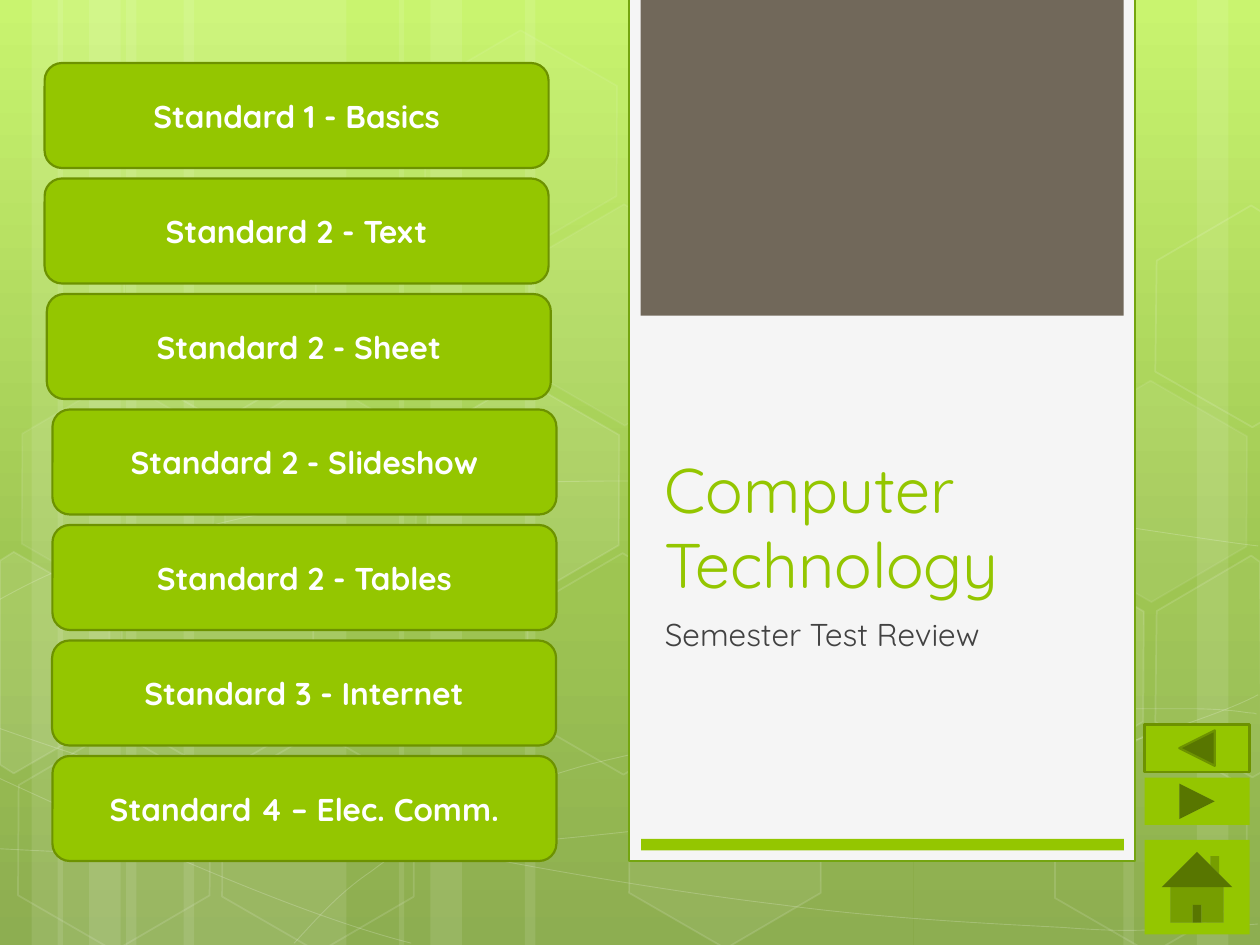
from copy import deepcopy

from lxml import etree
from pptx import Presentation
from pptx.dml.color import RGBColor
from pptx.enum.shapes import MSO_SHAPE
from pptx.enum.text import MSO_ANCHOR, MSO_AUTO_SIZE, PP_ALIGN
from pptx.oxml.ns import qn
from pptx.util import Pt

RECTANGLE = MSO_SHAPE.RECTANGLE
ROUNDED = MSO_SHAPE.ROUNDED_RECTANGLE
HEXAGON = MSO_SHAPE.HEXAGON
HOME = MSO_SHAPE.ACTION_BUTTON_HOME
NEXT = MSO_SHAPE.ACTION_BUTTON_FORWARD_OR_NEXT
BACK = MSO_SHAPE.ACTION_BUTTON_BACK_OR_PREVIOUS
TOP, MIDDLE, BOTTOM = MSO_ANCHOR.TOP, MSO_ANCHOR.MIDDLE, MSO_ANCHOR.BOTTOM
LEFT, CENTER = PP_ALIGN.LEFT, PP_ALIGN.CENTER
NO_FIT = MSO_AUTO_SIZE.NONE

FONT = "Quicksand"
GREEN, DARK_GREEN, WHITE = "94C600", "6D9200", "FFFFFF"
PAGE_WIDTH, PAGE_HEIGHT = 720, 540

BACKGROUND_STOPS = [(0, "C3F35F"), (0.62, "93BF3F"), (1, "81A53E")]

# Left and width of the pale vertical bands
BANDS = [(72, 126), (0, 36), (18, 60), (105, 126), (33, 36), (51, 60),
         (522, 126), (684, 36), (642, 60), (300, 222), (228, 36), (246, 60)]

# Bezier chains: a start point, then two handles and an end point per segment
WAVES = [
    [(-1, 485), (38, 487), (77, 489), (131, 488), (185, 487), (251, 486), (323, 479),
     (396, 472), (498, 458), (564, 444), (630, 431), (697, 409), (719, 397)],
    [(-1, 343), (19, 332), (40, 321), (81, 310), (122, 300), (180, 284), (244, 279),
     (308, 274), (385, 273), (464, 279), (544, 284), (676, 307), (719, 312)],
    [(-2, 444), (85, 484), (172, 523), (235, 539)],
    [(-1, 416), (22, 424), (44, 432), (86, 444), (128, 454), (191, 472), (251, 485),
     (310, 497), (387, 510), (446, 517), (505, 525), (570, 528), (608, 530),
     (646, 533), (656, 531), (674, 531), (693, 531), (706, 529), (719, 528)],
    [(168, 539), (181, 525), (194, 510), (212, 498), (229, 485), (253, 470), (273, 460),
     (293, 450), (305, 446), (332, 438), (359, 431), (407, 421), (432, 416),
     (457, 411), (461, 411), (483, 410), (505, 408), (541, 405), (566, 405),
     (590, 404), (632, 405), (632, 405), (648, 405), (664, 405), (680, 405),
     (693, 405), (705, 406), (711, 407), (718, 408), (716, 407), (718, 408)],
]

# Left, top, fill opacity and line opacity, in percent
HEXAGONS = [
    (236, 225.4, 10, 12), (293, 324.7, 0, 12), (293.8, 125.3, 7, 8),
    (234.7, 25.9, 4, 8), (351.4, 424.1, 6, 12), (2.2, 425.5, 0, 12),
    (4.3, 224.6, 7, 8), (61.2, 324.7, 0, 12), (118.8, 426.2, 0, 12),
    (120.2, 225.4, 7, 8), (62.6, 123.1, 0, 12), (535.7, 326.2, 10, 12),
    (594.7, 427, 0, 12), (594.7, 226.1, 7, 8),
]

# Hexagons cut by the page edge: corners and fill opacity
CUT_HEXAGONS = [
    ([(0, 320.4), (7.9, 315.4), (62.6, 347), (62.6, 410.4), (7.9, 442), (0, 437)], 10),
    ([(661, 349.2), (715, 317.5), (720, 321.1), (720.7, 441.4), (715.7, 444.2),
      (660.2, 412.6)], 4),
    ([(661, 149), (715, 117.4), (720.7, 121), (720.7, 241.2), (715.7, 244.1),
      (660.2, 212.4)], 0),
]

TOPICS = [
    (25.5, "Standard 1 - Basics"), (25.5, "Standard 2 - Text"),
    (26.8, "Standard 2 - Sheet"), (30, "Standard 2 - Slideshow"),
    (30, "Standard 2 - Tables"), (29.8, "Standard 3 - Internet"),
    (30, "Standard 4 – Elec. Comm."),
]


def rgb(value):
    return RGBColor.from_string(value)


def set_all(target, values):
    for name, value in values.items():
        setattr(target, name, value)


def paint(fill, color, opacity=100):
    if not color or not opacity:
        fill.background()
        return
    fill.solid()
    fill.fore_color.rgb = rgb(color)


def add_opacity(element, opacity):
    alpha = etree.SubElement(element.find(".//" + qn("a:srgbClr")), qn("a:alpha"))
    alpha.set("val", str(opacity * 1000))


def style(shape, fill=None, line=None, width=1.25, fill_opacity=100, line_opacity=100):
    shape.shadow.inherit = False
    paint(shape.fill, fill, fill_opacity)
    paint(shape.line.fill, line)
    if line:
        shape.line.width = Pt(width)
    properties = shape.element.spPr
    if fill and 0 < fill_opacity < 100:
        add_opacity(properties.find(qn("a:solidFill")), fill_opacity)
    if line and line_opacity < 100:
        add_opacity(properties.find(qn("a:ln")), line_opacity)


def add_box(shapes, kind, place, **look):
    box = shapes.add_shape(kind, *map(Pt, place))
    style(box, **look)
    return box


def add_outline(shapes, points, closed, **look):
    corners = [(Pt(x), Pt(y)) for x, y in points]
    builder = shapes.build_freeform(*corners[0], scale=1.0)
    builder.add_line_segments(corners[1:], close=closed)
    outline = builder.convert_to_shape()
    style(outline, **look)
    return outline


def bend(outline):
    """Turn every three straight steps into one Bezier segment."""
    steps = list(outline.element.iter(qn("a:lnTo")))
    for index in range(0, len(steps), 3):
        curve = etree.Element(qn("a:cubicBezTo"))
        steps[index].addprevious(curve)
        for step in steps[index:index + 3]:
            curve.append(step[0])
            step.getparent().remove(step)


def write(box, text, size, color, align, anchor, bold=False):
    frame = box.text_frame
    set_all(frame, {"word_wrap": True, "auto_size": NO_FIT, "vertical_anchor": anchor})
    para = frame.paragraphs[0]
    para.alignment = align
    span = para.add_run()
    span.text = text
    set_all(span.font, {"name": FONT, "size": Pt(size), "bold": bold})
    span.font.color.rgb = rgb(color)
    return para


def place_placeholder(box, place):
    set_all(box, dict(zip(("left", "top", "width", "height"), map(Pt, place))))


def fill_background(page):
    fill = page.background.fill
    fill.gradient()
    fill.gradient_angle = 270
    stop_list = page.element.find(".//" + qn("a:gsLst"))
    stop_list.insert(1, deepcopy(stop_list[0]))
    for stop, (position, color) in zip(fill.gradient_stops, BACKGROUND_STOPS):
        stop.position = position
        stop.color.rgb = rgb(color)


def add_backdrop(page):
    group = page.shapes.add_group_shape()
    shapes = group.shapes
    for left, width in BANDS:
        add_box(shapes, RECTANGLE, (left, 0, width, PAGE_HEIGHT), fill=WHITE, fill_opacity=10)
    for chain in WAVES:
        bend(add_outline(shapes, chain, False, line=WHITE, width=0.5, line_opacity=20))
    for left, top, fill_opacity, line_opacity in HEXAGONS:
        cell = add_box(shapes, HEXAGON, (left, top, 126, 109.4), fill=WHITE, line=WHITE,
                       width=1, fill_opacity=fill_opacity, line_opacity=line_opacity)
        cell.adjustments[0] = 0.285
        cell.rotation = 30
    for corners, fill_opacity in CUT_HEXAGONS:
        add_outline(shapes, corners, True, fill=WHITE, line=WHITE, width=1,
                    fill_opacity=fill_opacity, line_opacity=12)
    return group


def add_panel(page):
    return [
        add_box(page.shapes, RECTANGLE, (359.3, -1.5, 289.5, 493.5), fill="F5F5F5",
                line="74A510"),
        add_box(page.shapes, RECTANGLE, (366.1, -1.5, 276, 181.9), fill="71685A"),
        add_box(page.shapes, RECTANGLE, (366.3, 479.4, 276, 6.5), fill=GREEN),
    ]


def decorate_layout(page):
    """Draw the fixed decoration and hand it to the page's layout."""
    layout = page.slide_layout
    for box in list(layout.placeholders)[2:]:
        box.element.getparent().remove(box.element)
    for shape in [add_backdrop(page), *add_panel(page)]:
        layout.shapes.element.append(shape.element)


def fill_titles(page):
    title, subtitle = page.shapes.title, page.placeholders[1]
    place_placeholder(title, (372.7, 213.2, 260.6, 134))
    write(title, "Computer Technology", 36, GREEN, LEFT, BOTTOM)
    place_placeholder(subtitle, (372.7, 348, 260.6, 99.4))
    para = write(subtitle, "Semester Test Review", 18, "424242", LEFT, TOP)
    para.space_before = Pt(3.6)


def add_topic_buttons(page):
    for row, (left, text) in enumerate(TOPICS):
        button = add_box(page.shapes, ROUNDED, (left, 36 + 66 * row, 288, 60),
                         fill=GREEN, line=DARK_GREEN)
        write(button, text, 18, WHITE, CENTER, MIDDLE, bold=True)


def add_navigation(page):
    for kind, top, height, line in [(HOME, 480, 54, None), (NEXT, 444.4, 27, None),
                                    (BACK, 414, 27, DARK_GREEN)]:
        add_box(page.shapes, kind, (654, top, 60, height), fill=GREEN, line=line)


def main():
    deck = Presentation()
    set_all(deck, {"slide_width": Pt(PAGE_WIDTH), "slide_height": Pt(PAGE_HEIGHT)})
    page = deck.slides.add_slide(deck.slide_layouts[0])
    fill_background(page)
    decorate_layout(page)
    fill_titles(page)
    add_topic_buttons(page)
    add_navigation(page)
    deck.save("out.pptx")


if __name__ == "__main__":
    main()
